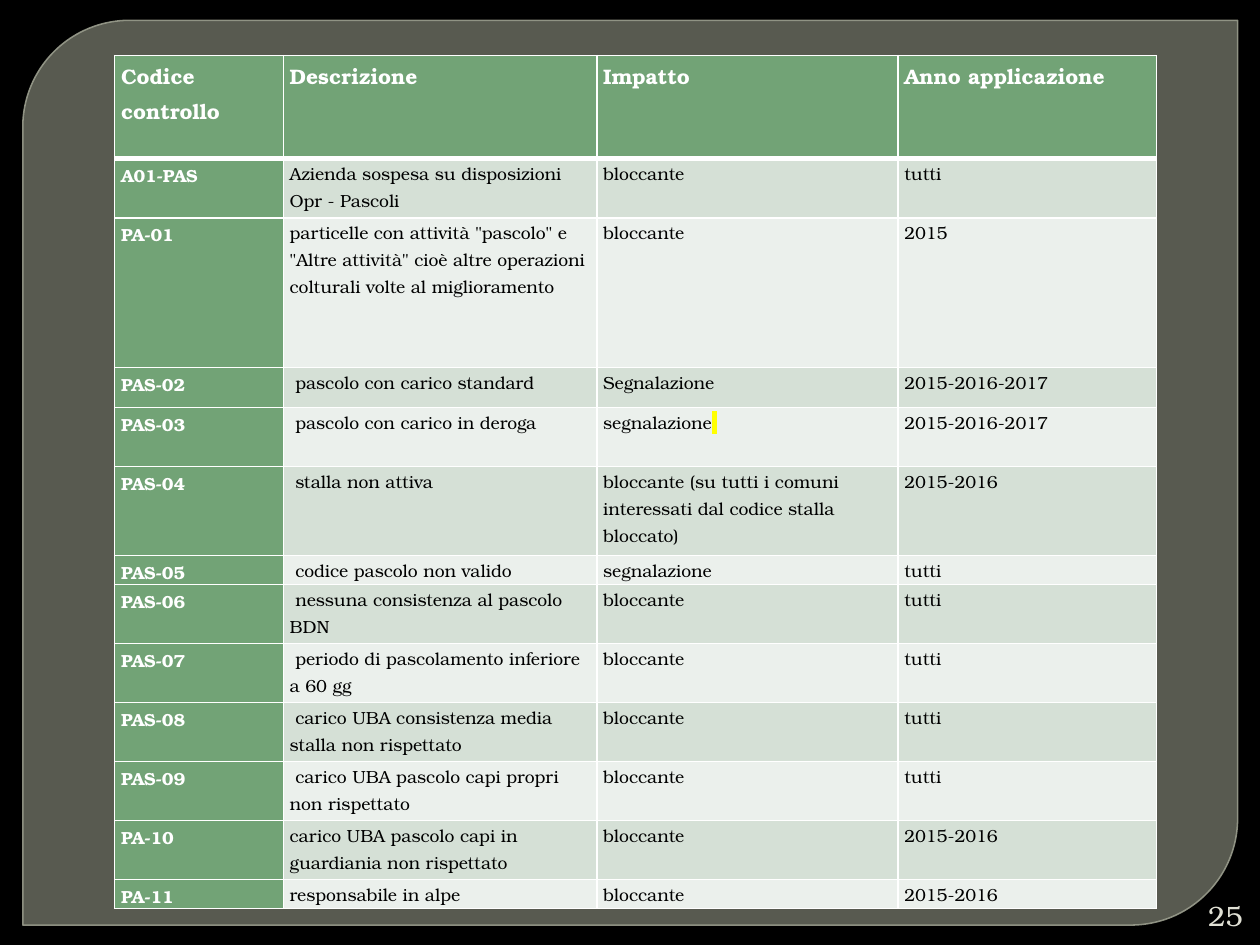
from lxml import etree
from pptx import Presentation
from pptx.dml.color import RGBColor
from pptx.enum.shapes import MSO_SHAPE
from pptx.enum.text import MSO_ANCHOR, PP_ALIGN
from pptx.oxml.ns import qn
from pptx.util import Cm, Pt

PANEL_SHAPE = MSO_SHAPE.ROUND_2_DIAG_RECTANGLE
MIDDLE = MSO_ANCHOR.MIDDLE
RIGHT = PP_ALIGN.RIGHT

FONT = "TeX Gyre Bonum"
WHITE, BLACK, GREEN = "FFFFFF", "000000", "72A376"
BANDS = ("D5E0D6", "EBF0EC")
COLUMN_WIDTHS = (3.4, 6.32, 6.07, 5.21)
TWO_LINES = 1.19
HEADINGS = ("Codice controllo", "Descrizione", "Impatto", "Anno applicazione")
HEADING_HEIGHT = 2.08
CONTROLS = (
    (TWO_LINES, "A01-PAS", "Azienda sospesa su disposizioni Opr - Pascoli", "bloccante", "tutti"),
    (3.02, "PA-01", 'particelle con attività "pascolo" e "Altre attività" cioè altre '
     "operazioni colturali volte al miglioramento", "bloccante", "2015"),
    (0.8, "PAS-02", " pascolo con carico standard", "Segnalazione", "2015-2016-2017"),
    (TWO_LINES, "PAS-03", " pascolo con carico in deroga", "segnalazione", "2015-2016-2017"),
    (1.8, "PAS-04", " stalla non attiva",
     "bloccante (su tutti i comuni interessati dal codice stalla bloccato)", "2015-2016"),
    (0.58, "PAS-05", " codice pascolo non valido", "segnalazione", "tutti"),
    (TWO_LINES, "PAS-06", " nessuna consistenza al pascolo BDN", "bloccante", "tutti"),
    (TWO_LINES, "PAS-07", " periodo di pascolamento inferiore a 60 gg", "bloccante", "tutti"),
    (TWO_LINES, "PAS-08", " carico UBA consistenza media stalla non rispettato",
     "bloccante", "tutti"),
    (TWO_LINES, "PAS-09", " carico UBA pascolo capi propri non rispettato", "bloccante", "tutti"),
    (TWO_LINES, "PA-10", "carico UBA pascolo capi in guardiania non rispettato",
     "bloccante", "2015-2016"),
    (0.58, "PA-11", "responsabile in alpe", "bloccante", "2015-2016"),
)
HIGHLIGHTED_ROW, HIGHLIGHTED_COLUMN = 4, 2


def paint(color_format, color):
    """Give a colour format a hex colour."""
    color_format.rgb = RGBColor.from_string(color)


def fill_solid(target, color):
    """Fill a shape, cell or background with one colour."""
    target.fill.solid()
    paint(target.fill.fore_color, color)


def format_span(span, size, color, bold=False):
    """Set the font of a run."""
    span.font.name = FONT
    span.font.size = Pt(size)
    span.font.bold = bold
    paint(span.font.color, color)


def highlight(span, color):
    """Mark a formatted run with a background colour."""
    mark = etree.Element(qn("a:highlight"))
    etree.SubElement(mark, qn("a:srgbClr"), val=color)
    span.font._element.find(qn("a:latin")).addprevious(mark)


def add_alpha(parent, percent):
    """Make the first colour below an element partly opaque."""
    color = parent.find(qn("a:solidFill")).find(qn("a:srgbClr"))
    etree.SubElement(color, qn("a:alpha"), val=str(percent * 1000))


def set_borders(cell, top, bottom):
    """Draw white cell borders with the given top and bottom widths."""
    properties = cell._tc.get_or_add_tcPr()
    widths = (("a:lnL", 1), ("a:lnR", 1), ("a:lnT", top), ("a:lnB", bottom))
    for position, (tag, width) in enumerate(widths):
        line = etree.Element(qn(tag), w=str(Pt(width)))
        solid = etree.SubElement(line, qn("a:solidFill"))
        etree.SubElement(solid, qn("a:srgbClr"), val=WHITE)
        properties.insert(position, line)


def add_panel(page, left, top, width, height):
    """Place the translucent panel with two rounded corners."""
    panel = page.shapes.add_shape(PANEL_SHAPE, Cm(left), Cm(top), Cm(width), Cm(height))
    panel.shadow.inherit = False
    panel.adjustments[0] = 0.118
    fill_solid(panel, "888B7B")
    paint(panel.line.color, "9DA090")
    panel.line.width = Pt(0.87)
    properties = panel._element.spPr
    add_alpha(properties, 65)
    add_alpha(properties.find(qn("a:ln")), 88)


def add_page_number(page, left, top, width, height):
    """Place the page number in its box."""
    box = page.shapes.add_textbox(Cm(left), Cm(top), Cm(width), Cm(height))
    frame = box.text_frame
    frame.word_wrap = True
    frame.margin_left = frame.margin_right = frame.margin_top = frame.margin_bottom = 0
    frame.vertical_anchor = MIDDLE
    frame.text = "25"
    para = frame.paragraphs[0]
    para.alignment = RIGHT
    format_span(para.runs[0], 16, "E0E0D4")


def write_cell(cell, text, row, column):
    """Write and style one table cell according to its place."""
    is_heading = row == 0
    is_label = is_heading or column == 0
    cell.margin_left = cell.margin_right = Cm(0.13)
    cell.margin_top = cell.margin_bottom = 0
    fill_solid(cell, GREEN if is_label else BANDS[(row - 1) % 2])
    set_borders(cell, 3 if row == 1 else 1, 3 if is_heading else 1)
    cell.text_frame.text = text
    para = cell.text_frame.paragraphs[0]
    para.line_spacing = 1.15
    size, color = 12 if is_heading else 10, WHITE if is_label else BLACK
    format_span(para.runs[0], size, color, is_label)
    if (row, column) == (HIGHLIGHTED_ROW, HIGHLIGHTED_COLUMN):
        span = para.add_run()
        span.text = " "
        format_span(span, size, color)
        highlight(span, "FFFF00")


def add_control_table(page, left, top):
    """Place the table of controls."""
    rows = ((HEADING_HEIGHT, *HEADINGS), *CONTROLS)
    width, height = sum(COLUMN_WIDTHS), sum(row[0] for row in rows)
    table = page.shapes.add_table(
        len(rows), len(COLUMN_WIDTHS), Cm(left), Cm(top), Cm(width), Cm(height)).table
    table.horz_banding = False
    for column, column_width in zip(table.columns, COLUMN_WIDTHS):
        column.width = Cm(column_width)
    for row, (row_height, *texts) in enumerate(rows):
        table.rows[row].height = Cm(row_height)
        for column, text in enumerate(texts):
            write_cell(table.cell(row, column), text, row, column)


def main():
    """Build and save the deck."""
    deck = Presentation()
    deck.slide_width, deck.slide_height = Cm(25.4), Cm(19.05)
    page = deck.slides.add_slide(deck.slide_layouts[6])
    fill_solid(page.background, BLACK)
    add_panel(page, 0.46, 0.41, 24.49, 18.24)
    add_page_number(page, 24, 18.08, 1.05, 0.76)
    add_control_table(page, 2.31, 1.12)
    deck.save("out.pptx")


if __name__ == "__main__":
    main()
